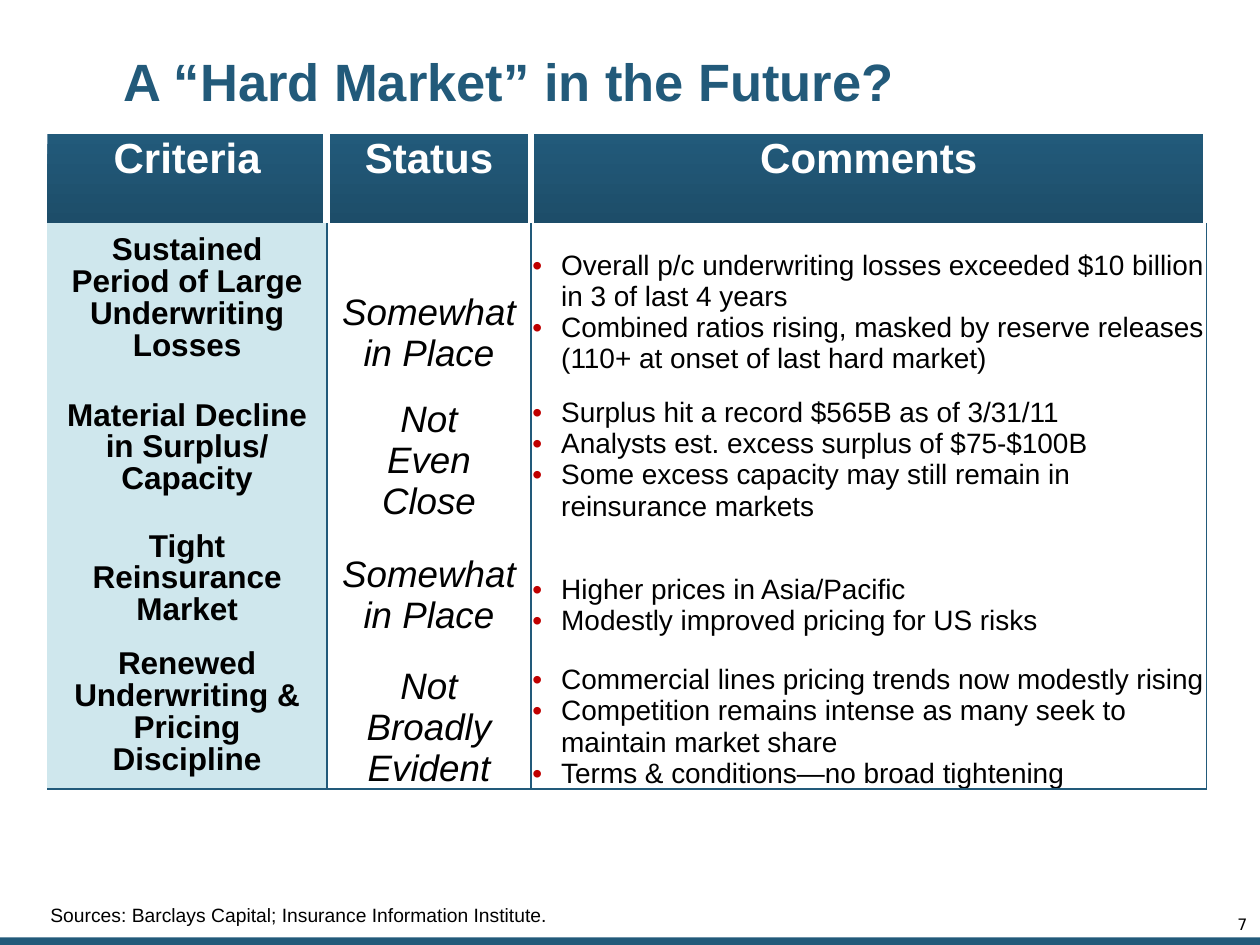
from copy import deepcopy
from dataclasses import dataclass

from lxml import etree
from pptx import Presentation
from pptx import util as u
from pptx.dml.color import RGBColor
from pptx.enum import shapes, text
from pptx.oxml.ns import qn

# The page is a grid of 40 columns by 30 rows; places and sizes are in grid units.
GRID = u.Inches(0.25)
COLORS = {"blue": "225A7A", "deep": "1D4D69", "pale": "CFE7ED",
          "white": "FFFFFF", "black": "000000", "red": "C00000"}
NO_STYLE = "{2D5ABB26-0587-4C30-8999-92F81FD0307C}"
COLUMN_WIDTHS = (8.88, 6.48, 21.44)
ROW_HEIGHTS = (2.84, 4.8, 4.68, 3.64, 4.84)
HEADERS = ("Criteria", "Status", "Comments")
WIDE_INSETS = (0.1, 0.05, 0.1, 0.05)
TIGHT_INSETS = (0.01, 0.01, 0.01, 0)
CENTER = text.PP_ALIGN.CENTER
MIDDLE, BOTTOM = text.MSO_ANCHOR.MIDDLE, text.MSO_ANCHOR.BOTTOM


@dataclass
class Area:
    left: float
    top: float
    width: float
    height: float

    def lengths(self) -> list[int]:
        return [units(v) for v in (self.left, self.top, self.width, self.height)]


@dataclass
class Criterion:
    name: str
    status: str
    comments: list[str]


CRITERIA = [
    Criterion("Sustained Period of Large Underwriting Losses", "Somewhat in Place", [
        "Overall p/c underwriting losses exceeded $10 billion in 3 of last 4 years",
        "Combined ratios rising, masked by reserve releases\n"
        "(110+ at onset of last hard market)"]),
    Criterion("Material Decline in Surplus/ Capacity", "Not\nEven\nClose", [
        "Surplus hit a record $565B as of 3/31/11",
        "Analysts est. excess surplus of $75-$100B",
        "Some excess capacity may still remain in reinsurance markets"]),
    Criterion("Tight Reinsurance Market", "Somewhat in Place", [
        "Higher prices in Asia/Pacific",
        "Modestly improved pricing for US risks"]),
    Criterion("Renewed Underwriting & Pricing Discipline", "Not\nBroadly Evident", [
        "Commercial lines pricing trends now modestly rising",
        "Competition remains intense as many seek to maintain market share",
        "Terms & conditions—no broad tightening"]),
]


def units(value: float) -> int:
    return round(value * GRID)


def rgb(name: str) -> RGBColor:
    return RGBColor.from_string(COLORS[name])


def add_bullet(para, indent: float = 0.23) -> None:
    props = para._p.get_or_add_pPr()
    props.set("marL", str(u.Inches(indent)))
    props.set("indent", str(-u.Inches(indent)))
    color = etree.SubElement(props, qn("a:buClr"))
    etree.SubElement(color, qn("a:srgbClr"), val=COLORS["red"])
    etree.SubElement(props, qn("a:buFont"), typeface="Arial")
    etree.SubElement(props, qn("a:buChar"), char="•")


def write(frame, lines: list[str], *, size: float, color: str = "black",
          font: str = "Arial", bold: bool = False, italic: bool = False,
          align=text.PP_ALIGN.LEFT, spacing: float = 1.0, bullets: bool = False) -> None:
    """Fill a text frame with one formatted paragraph per line."""
    for index, line in enumerate(lines):
        para = frame.add_paragraph() if index else frame.paragraphs[0]
        para.text = line
        para.alignment = align
        para.line_spacing = spacing
        para.space_before = u.Pt(0)
        if bullets:
            add_bullet(para)
        for span in para.runs:
            span.font.size = u.Pt(size)
            span.font.name = font
            span.font.bold, span.font.italic = bold, italic
            span.font.color.rgb = rgb(color)
        # Line breaks take the format of the text around them.
        for line_break in para._p.findall(qn("a:br")):
            line_break.insert(0, deepcopy(para.runs[0]._r.rPr))


def set_insets(target, insets: tuple) -> None:
    (target.margin_left, target.margin_top,
     target.margin_right, target.margin_bottom) = map(u.Inches, insets)


def add_text(page, area: Area, line: str, insets: tuple, anchor, **style) -> None:
    frame = page.shapes.add_textbox(*area.lengths()).text_frame
    frame.word_wrap = True
    frame.vertical_anchor = anchor
    set_insets(frame, insets)
    write(frame, [line], **style)


def set_borders(cell, sides: str, color: str, width: float) -> None:
    """Draw the sides named among the letters L, R, T, B and clear the others."""
    props = cell._tc.get_or_add_tcPr()
    for side in "LRTB":
        line = etree.SubElement(props, qn(f"a:ln{side}"), w=str(u.Pt(width)))
        if side in sides:
            fill = etree.SubElement(line, qn("a:solidFill"))
            etree.SubElement(fill, qn("a:srgbClr"), val=COLORS[color])
        else:
            etree.SubElement(line, qn("a:noFill"))


def fill_header(cell, column: int, label: str) -> None:
    set_borders(cell, "LR" if column else "R", "white", 4.5)
    cell.fill.gradient()
    cell.fill.gradient_angle = 270
    for stop, name in zip(cell.fill.gradient_stops, ("blue", "deep")):
        stop.color.rgb = rgb(name)
    set_insets(cell, WIDE_INSETS)
    write(cell.text_frame, [label], size=24, color="white", bold=True,
          align=CENTER, spacing=0.9)


def fill_body(cell, lines: list[str], *, sides: str, fill: str, insets: tuple,
              anchor, **style) -> None:
    set_borders(cell, sides, "blue", 1)
    cell.fill.solid()
    cell.fill.fore_color.rgb = rgb(fill)
    cell.vertical_anchor = anchor
    set_insets(cell, insets)
    write(cell.text_frame, lines, **style)


def add_criteria_table(page, left: float, top: float) -> None:
    area = Area(left, top, sum(COLUMN_WIDTHS), sum(ROW_HEIGHTS))
    table = page.shapes.add_table(len(ROW_HEIGHTS), len(COLUMN_WIDTHS),
                                  *area.lengths()).table
    table._tbl.tblPr.find(qn("a:tableStyleId")).text = NO_STYLE
    for column, width in zip(table.columns, COLUMN_WIDTHS):
        column.width = units(width)
    for row, height in zip(table.rows, ROW_HEIGHTS):
        row.height = units(height)
    for column, label in enumerate(HEADERS):
        fill_header(table.cell(0, column), column, label)
    plain = dict(sides="LRB", fill="white", insets=TIGHT_INSETS, anchor=BOTTOM)
    for row, item in enumerate(CRITERIA, start=1):
        fill_body(table.cell(row, 0), [item.name], sides="RB", fill="pale",
                  insets=WIDE_INSETS, anchor=MIDDLE, size=18, bold=True,
                  align=CENTER, spacing=0.9)
        fill_body(table.cell(row, 1), [item.status], **plain, size=21,
                  italic=True, align=CENTER)
        fill_body(table.cell(row, 2), item.comments, **plain, size=16, bullets=True)


def set_title(page, area: Area, line: str) -> None:
    title = page.shapes.title
    title.left, title.top, title.width, title.height = area.lengths()
    frame = title.text_frame
    frame.auto_size = text.MSO_AUTO_SIZE.NONE
    frame.vertical_anchor = MIDDLE
    set_insets(frame, (0.05,) * 4)
    write(frame, [line], size=30, color="blue", bold=True, spacing=0.9)


def add_bottom_bar(page, area: Area) -> None:
    bar = page.shapes.add_shape(shapes.MSO_SHAPE.RECTANGLE, *area.lengths())
    bar.shadow.inherit = False
    bar.fill.solid()
    bar.fill.fore_color.rgb = rgb("blue")
    bar.line.fill.background()


def main() -> None:
    deck = Presentation()
    deck.slide_width, deck.slide_height = units(40), units(30)
    page = deck.slides.add_slide(deck.slide_layouts[5])
    add_bottom_bar(page, Area(0, 29.76, 40, 0.24))
    add_text(page, Area(37.64, 29.12, 1.96, 0.52), "7", (0,) * 4,
             text.MSO_ANCHOR.TOP, size=9, font="DejaVu Sans",
             align=text.PP_ALIGN.RIGHT, spacing=0.85)
    set_title(page, Area(3.72, 1.32, 25.64, 2.72), "A “Hard Market” in the Future?")
    add_criteria_table(page, 1.5, 4.25)
    add_text(page, Area(0, 27.96, 33.12, 2.04),
             "Sources: Barclays Capital; Insurance Information Institute.",
             (0.4, 0, 0, 0.15), BOTTOM, size=11, spacing=0.85)
    deck.save("out.pptx")


if __name__ == "__main__":
    main()
